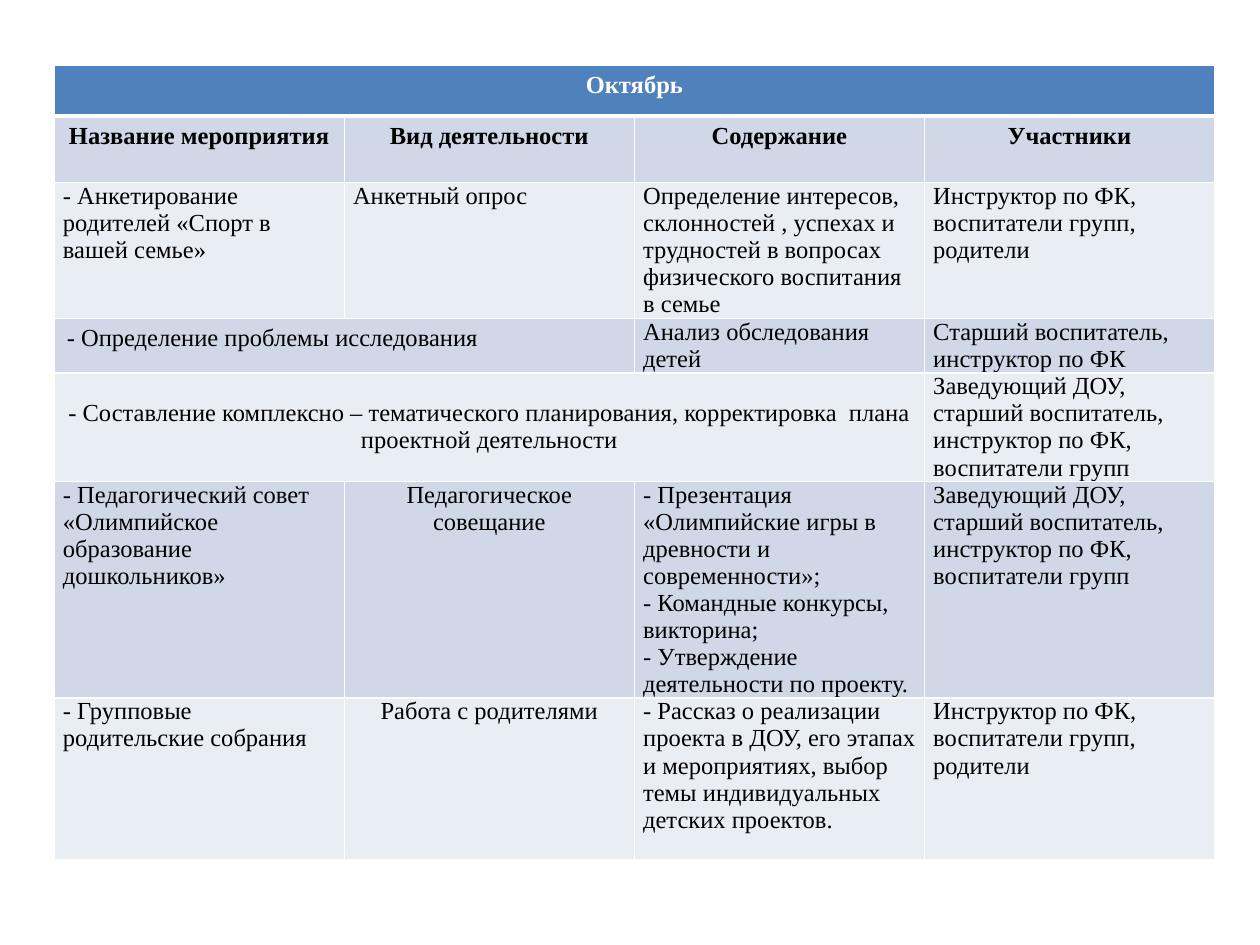
from lxml.etree import SubElement
from pptx import Presentation
from pptx.dml.color import RGBColor
from pptx.enum.text import MSO_ANCHOR, PP_ALIGN
from pptx.oxml.ns import qn
from pptx.util import Inches, Pt

BLUE = RGBColor(0x4F, 0x81, 0xBD)
LIGHT_BLUE = RGBColor(0xD0, 0xD8, 0xE8)
PALE_BLUE = RGBColor(0xE9, 0xED, 0xF4)
WHITE = RGBColor(0xFF, 0xFF, 0xFF)
BLACK = RGBColor(0, 0, 0)

SLIDE_WIDTH, SLIDE_HEIGHT = Inches(10), Inches(7.5)
COLUMN_COUNT = 4
ROW_HEIGHTS = [0.4, 0.53, 1.08, 0.43, 0.86, 1.72, 1.28]

TITLE = {"bold": True, "color": WHITE, "align": PP_ALIGN.CENTER}
HEADING = {"bold": True, "align": PP_ALIGN.CENTER}
BODY = {"margins": (0.07, 0)}
CENTERED = {**BODY, "align": PP_ALIGN.CENTER}
MIDDLE = {**CENTERED, "anchor": MSO_ANCHOR.MIDDLE}
WIDE = {}

INSTRUCTOR_TEAM = "Инструктор по ФК, воспитатели групп, родители"
FULL_TEAM = "Заведующий ДОУ, старший воспитатель, инструктор по ФК, воспитатели групп"

ROWS = [
    [("Октябрь", 4, TITLE)],
    [(heading, 1, HEADING) for heading in
     ("Название мероприятия", "Вид деятельности", "Содержание", "Участники")],
    [("- Анкетирование родителей «Спорт в вашей семье»", 1, BODY),
     ("Анкетный опрос", 1, BODY),
     ("Определение интересов, склонностей , успехах и трудностей "
      "в вопросах физического воспитания в семье", 1, BODY),
     (INSTRUCTOR_TEAM, 1, BODY)],
    [("- Определение проблемы исследования", 2, WIDE),
     ("Анализ обследования детей", 1, BODY),
     ("Старший воспитатель, инструктор по ФК", 1, BODY)],
    [("- Составление комплексно – тематического планирования, "
      "корректировка  плана проектной деятельности", 3, MIDDLE),
     (FULL_TEAM, 1, BODY)],
    [("- Педагогический совет «Олимпийское образование дошкольников»", 1, BODY),
     ("Педагогическое совещание", 1, CENTERED),
     ("- Презентация «Олимпийские игры в древности и современности»;\n"
      "- Командные конкурсы, викторина;\n"
      "- Утверждение деятельности по проекту.", 1, BODY),
     (FULL_TEAM, 1, BODY)],
    [("- Групповые родительские собрания", 1, BODY),
     ("Работа с родителями", 1, CENTERED),
     ("- Рассказ о реализации проекта в ДОУ, его этапах и мероприятиях, "
      "выбор темы индивидуальных детских проектов.", 1, BODY),
     (INSTRUCTOR_TEAM, 1, BODY)],
]


def set_attributes(target, values):
    for name, value in values.items():
        setattr(target, name, value)


def add_borders(cell, widths):
    properties = cell._tc.get_or_add_tcPr()
    for side, width in widths.items():
        line = SubElement(properties, qn(f"a:{side}"), w=str(Pt(width)))
        fill = SubElement(line, qn("a:solidFill"))
        SubElement(fill, qn("a:srgbClr"), val=str(WHITE))


def format_cell(cell, row_index):
    add_borders(cell, {"lnL": 1, "lnR": 1,
                       "lnT": 3 if row_index == 1 else 1,
                       "lnB": 3 if row_index == 0 else 1})
    cell.fill.solid()
    row_color = LIGHT_BLUE if row_index % 2 else PALE_BLUE
    cell.fill.fore_color.rgb = BLUE if row_index == 0 else row_color


def write_cell(cell, text, style):
    horizontal, vertical = (Inches(margin) for margin in style.get("margins", (0.1, 0.05)))
    set_attributes(cell, {
        "text": text,
        "margin_left": horizontal, "margin_right": horizontal,
        "margin_top": vertical, "margin_bottom": vertical,
        "vertical_anchor": style.get("anchor", MSO_ANCHOR.TOP),
    })
    for paragraph in cell.text_frame.paragraphs:
        paragraph.alignment = style.get("align", PP_ALIGN.LEFT)
        for run in paragraph.runs:
            set_attributes(run.font, {"name": "Times New Roman", "size": Pt(14),
                                      "bold": style.get("bold", False)})
            run.font.color.rgb = style.get("color", BLACK)


def add_month_plan(slide, left, top, width, height):
    table = slide.shapes.add_table(len(ROWS), COLUMN_COUNT, left, top, width, height).table
    for column in table.columns:
        column.width = width // COLUMN_COUNT
    for row_index, entries in enumerate(ROWS):
        table.rows[row_index].height = int(height * ROW_HEIGHTS[row_index] / sum(ROW_HEIGHTS))
        for column_index in range(COLUMN_COUNT):
            format_cell(table.cell(row_index, column_index), row_index)
        column_index = 0
        for text, span, style in entries:
            cell = table.cell(row_index, column_index)
            if span > 1:
                cell.merge(table.cell(row_index, column_index + span - 1))
            write_cell(cell, text, style)
            column_index += span


def main():
    presentation = Presentation()
    set_attributes(presentation, {"slide_width": SLIDE_WIDTH, "slide_height": SLIDE_HEIGHT})
    slide = presentation.slides.add_slide(presentation.slide_layouts[6])
    add_month_plan(slide, Inches(0.43), Inches(0.52), Inches(9.21), Inches(sum(ROW_HEIGHTS)))
    presentation.save("out.pptx")


if __name__ == "__main__":
    main()
